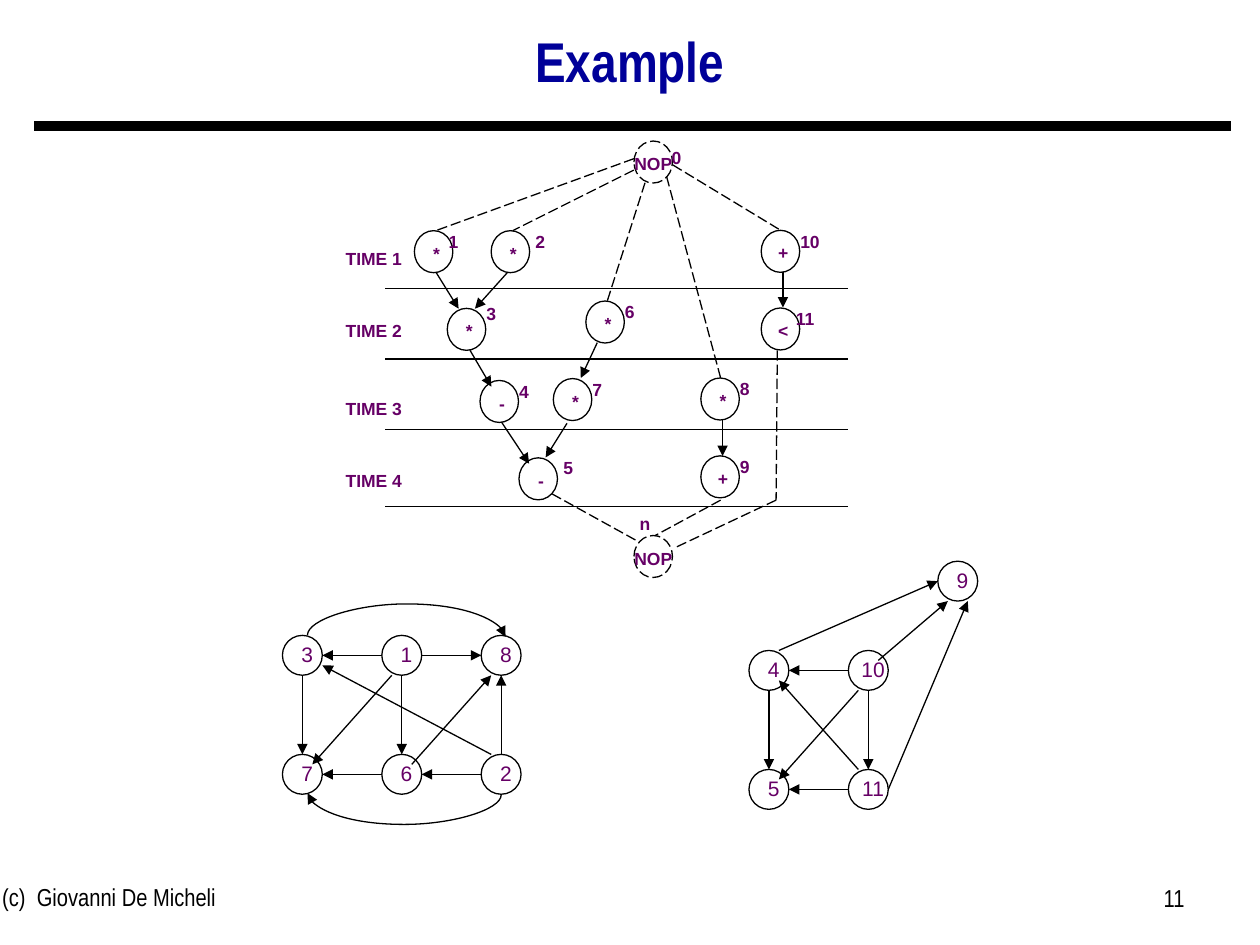
"""Build a slide with a scheduled sequencing graph and two compatibility graphs."""
from lxml import etree
from pptx import Presentation
from pptx.dml.color import RGBColor
from pptx.enum.dml import MSO_LINE
from pptx.enum.shapes import MSO_CONNECTOR, MSO_SHAPE
from pptx.enum.text import MSO_ANCHOR, PP_ALIGN
from pptx.oxml.ns import qn
from pptx.util import Pt

STRAIGHT, CURVE = MSO_CONNECTOR.STRAIGHT, MSO_CONNECTOR.CURVE
OVAL = MSO_SHAPE.OVAL
LONG_DASH = MSO_LINE.LONG_DASH
LEFT, CENTER, RIGHT = PP_ALIGN.LEFT, PP_ALIGN.CENTER, PP_ALIGN.RIGHT
TOP, MIDDLE = MSO_ANCHOR.TOP, MSO_ANCHOR.MIDDLE

COLORS = {"line": "000000", "footer": "000000", "title": "000099", "label": "660066"}

TIME_STEPS = [("TIME 1", 138.2, 164.9), ("TIME 2", 179.3, 205.2),
              ("TIME 3", 223.9, 245.5), ("TIME 4", 265, 289.4)]
OPERATIONS = [
    ("0", "NOP", 362.3, 80.6), ("1", "*", 236.8, 131.8), ("2", "*", 280.7, 131.8),
    ("3", "*", 255.6, 176.2), ("4", "-", 274.3, 217.4), ("5", "-", 296.6, 261.6),
    ("6", "*", 334.8, 172), ("7", "*", 316.2, 216.3), ("8", "*", 400.5, 216),
    ("9", "+", 400.5, 260.5), ("10", "+", 435, 131.6), ("11", "<", 435, 176),
    ("n", "NOP", 362.3, 306),
]
NUMBER_OFFSET = (9.3, -3.4)
SPECIAL_OFFSETS = {"0": (8.5, 0), "1": (6.6, -3.6), "2": (12.3, -3.6), "3": (9.4, -6.8),
                   "5": (12.3, -3.8), "10": (12.1, -3.4), "n": (-9.5, -16.6)}
NOP_LINKS = [
    (362.2, 90.7, 249.1, 131.8), (362.2, 97.2, 293, 131.8), (368.6, 104.4, 347, 172.1),
    (380.9, 100.8, 411.8, 216), (384.5, 94.3, 446.4, 131.8), (315.4, 282.2, 365, 309.6),
    (411.8, 285.8, 374.4, 306), (444.2, 200.2, 443.5, 285.8), (443.5, 285.8, 385.2, 313.2),
]
DEPENDENCIES = [
    (249.1, 155.5, 262.1, 176.4), (290.2, 155.5, 271.4, 176.4), (341.3, 195.8, 331.9, 216),
    (412.9, 239.8, 412.9, 260.6), (447.4, 155.5, 447.4, 175.7), (268.6, 200.2, 280.8, 221),
    (286.6, 241.2, 302.4, 265), (324, 241.9, 311.8, 261.4),
]

RADIUS, COLUMN_PITCH, ROW_PITCH = 11.4, 56.8, 68
WEST, EAST, NORTH, SOUTH = (-1, 0), (1, 0), (0, -1), (0, 1)
MULTIPLIERS = {
    "origin": (172.8, 374.5),
    "nodes": {"3": (0, 0), "1": (1, 0), "8": (2, 0), "7": (0, 1), "6": (1, 1), "2": (2, 1)},
    "edges": [
        ("1", WEST, "3", EAST), ("1", EAST, "8", WEST), ("6", WEST, "7", EAST),
        ("2", WEST, "6", EAST), ("3", SOUTH, "7", NORTH), ("1", SOUTH, "6", NORTH),
        ("2", NORTH, "8", SOUTH), ("1", (-0.5, 1), "7", (0.5, -0.5)),
        ("6", (0.5, -0.5), "8", (-0.5, 1)), ("2", (-0.5, -1), "3", (1, 0.5)),
    ],
}
ALUS = {
    "origin": (439.4, 383.1),
    "nodes": {"4": (0, 0), "10": (1, 0), "5": (0, 1), "11": (1, 1), "9": (1.9, -0.75)},
    "edges": [
        ("10", WEST, "4", EAST), ("11", WEST, "5", EAST), ("4", SOUTH, "5", NORTH),
        ("10", SOUTH, "11", NORTH), ("10", (-0.5, 1), "5", (0.5, -0.5)),
        ("11", (-0.5, -1), "4", (0.5, 0.5)), ("10", (0.5, -0.5), "9", (-0.5, 1)),
        ("4", (0.5, -1), "9", WEST), ("11", EAST, "9", (0.5, 1)),
    ],
}
ARCS = [(175.7, 288.9, 363.4, -18, "tailEnd"), (175.7, 286.4, 453.7, 18, "headEnd")]


def add_text(slide, text, left, top, width, height, size=10, bold=True, color="label",
             font="Arial", align=CENTER, anchor=TOP):
    shape = slide.shapes.add_textbox(Pt(left), Pt(top), Pt(width), Pt(height))
    frame = shape.text_frame
    frame.text = text
    frame.word_wrap = True
    frame.vertical_anchor = anchor
    paragraph = frame.paragraphs[0]
    paragraph.alignment = align
    run_font = paragraph.runs[0].font
    run_font.name, run_font.size, run_font.bold = font, Pt(size), bold
    run_font.color.rgb = RGBColor.from_string(COLORS[color])
    return paragraph


def style_line(line, width=0.75, dashed=False):
    line.color.rgb = RGBColor.from_string(COLORS["line"])
    line.width = Pt(width)
    if dashed:
        line.dash_style = LONG_DASH


def add_line(slide, start_x, start_y, end_x, end_y, arrow=None, kind=STRAIGHT, **style):
    connector = slide.shapes.add_connector(kind, Pt(start_x), Pt(start_y), Pt(end_x), Pt(end_y))
    style_line(connector.line, **style)
    if arrow:
        etree.SubElement(connector.line._get_or_add_ln(), qn(f"a:{arrow}"), type="triangle")
    etree.SubElement(connector._element.spPr, qn("a:effectLst"))
    return connector


def add_arc(slide, left, right, y, depth, arrow):
    center, half_span = (left + right) / 2, (right - left) / 2
    connector = add_line(slide, center - 0.5, y + half_span, center + 0.5, y - half_span,
                         arrow, CURVE)
    connector.rotation = 90
    geometry = connector._element.spPr.find(qn("a:prstGeom"))
    etree.SubElement(geometry.find(qn("a:avLst")), qn("a:gd"),
                     name="adj1", fmla=f"val {depth * 100000}")


def add_oval(slide, left, top, width, height, dashed=False):
    shape = slide.shapes.add_shape(OVAL, Pt(left), Pt(top), Pt(width), Pt(height))
    shape.shadow.inherit = False
    shape.fill.background()
    style_line(shape.line, dashed=dashed)


def add_sequencing_graph(slide):
    for label, label_top, rule_y in TIME_STEPS:
        add_text(slide, label, 188.6, label_top, 50, 19)
        add_line(slide, 220.3, rule_y, 484.6, rule_y)
    for number, symbol, left, top in OPERATIONS:
        is_nop = symbol == "NOP"
        add_oval(slide, left, top, 22, 24, is_nop)
        text_left, text_width = (left - 9.5, 41) if is_nop else (left, 25.2)
        add_text(slide, symbol, text_left, top + 3.4, text_width, 19)
        shift_x, shift_y = SPECIAL_OFFSETS.get(number, NUMBER_OFFSET)
        add_text(slide, number, left + shift_x, top + shift_y, 31.5, 19)
    for link in NOP_LINKS:
        add_line(slide, *link, dashed=True)
    for dependency in DEPENDENCIES:
        add_line(slide, *dependency, arrow="tailEnd")


def add_compatibility_graph(slide, graph):
    origin_x, origin_y = graph["origin"]
    centers = {name: (origin_x + column * COLUMN_PITCH, origin_y + row * ROW_PITCH)
               for name, (column, row) in graph["nodes"].items()}
    for name, (x, y) in centers.items():
        add_oval(slide, x - RADIUS, y - RADIUS, 2 * RADIUS, 2 * RADIUS)
        add_text(slide, name, x - RADIUS, y - RADIUS, 28.2, 21.6, size=12, bold=False)
    for source, source_side, target, target_side in graph["edges"]:
        start, end = ([center + RADIUS * offset for center, offset in zip(centers[name], side)]
                      for name, side in ((source, source_side), (target, target_side)))
        add_line(slide, *start, *end, arrow="tailEnd")


def main():
    presentation = Presentation()
    presentation.slide_width, presentation.slide_height = Pt(720), Pt(540)
    slide = presentation.slides.add_slide(presentation.slide_layouts[6])
    add_line(slide, 19.5, 72, 703.5, 72, width=6)
    footer = {"size": 14, "bold": False, "color": "footer", "font": "Arial Narrow"}
    add_text(slide, "(c)  Giovanni De Micheli", -5.8, 500.4, 228, 37.4, align=LEFT, **footer)
    add_text(slide, "11", 516.2, 501.1, 167.8, 37.4, align=RIGHT, **footer)
    title = add_text(slide, "Example", 54, -8, 612, 90, size=32, color="title",
                     font="Arial Narrow", anchor=MIDDLE)
    title.line_spacing = 0.9
    add_sequencing_graph(slide)
    for graph in (MULTIPLIERS, ALUS):
        add_compatibility_graph(slide, graph)
    for arc in ARCS:
        add_arc(slide, *arc)
    presentation.save("out.pptx")


if __name__ == "__main__":
    main()
